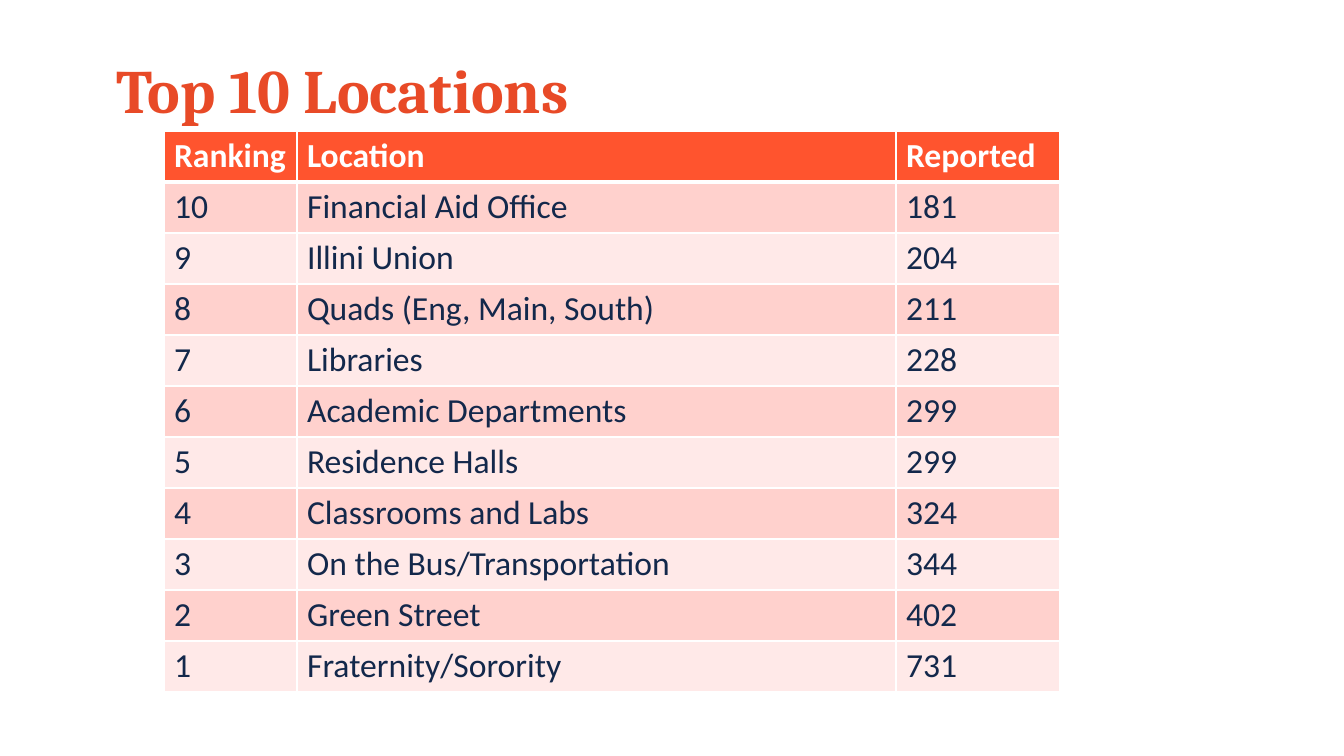
import dataclasses
import typing

import lxml.etree
import pptx
import pptx.dml.color
import pptx.enum.text
import pptx.oxml.ns
import pptx.slide
import pptx.table
import pptx.text.text
import pptx.util

EMU_PER_PX = 12192000 / 1344


@dataclasses.dataclass(frozen=True)
class Theme:
    title_color: str = "E84A27"
    header_fill: str = "FF542E"
    header_text: str = "FFFFFF"
    body_text: str = "13284B"
    band_fills: tuple[str, str] = ("FFD1CD", "FFE9E8")
    border: str = "FFFFFF"
    title_font: str = "Cambria"
    table_font: str = "Calibri"
    title_size: int = 44
    table_size: int = 24
    thin_line: int = 1
    thick_line: int = 3


@dataclasses.dataclass(frozen=True)
class Location:
    name: str
    reported: int


@dataclasses.dataclass(frozen=True)
class CellStyle:
    fill: str
    color: str
    bold: bool
    top: int
    bottom: int


THEME = Theme()
HEADINGS = ("Ranking", "Location", "Reported")
COLUMN_WIDTHS = (133, 599, 164)
ROW_HEIGHT = 51
LOCATIONS = (
    Location("Financial Aid Office", 181),
    Location("Illini Union", 204),
    Location("Quads (Eng, Main, South)", 211),
    Location("Libraries", 228),
    Location("Academic Departments", 299),
    Location("Residence Halls", 299),
    Location("Classrooms and Labs", 324),
    Location("On the Bus/Transportation", 344),
    Location("Green Street", 402),
    Location("Fraternity/Sorority", 731),
)


def px(length: int) -> pptx.util.Emu:
    return pptx.util.Emu(round(length * EMU_PER_PX))


def set_attributes(target: object, values: dict[str, typing.Any]) -> None:
    for name, value in values.items():
        setattr(target, name, value)


def write_text(
    paragraph: pptx.text.text._Paragraph, text: str, font: str, size: int, color: str, bold: bool
) -> None:
    run = paragraph.add_run()
    run.text = text
    set_attributes(run.font, {"name": font, "size": pptx.util.Pt(size), "bold": bold})
    run.font.color.rgb = pptx.dml.color.RGBColor.from_string(color)


def draw_title(slide: pptx.slide.Slide, text: str) -> None:
    frame = slide.shapes.add_textbox(px(107), px(31), px(1114), px(126)).text_frame
    set_attributes(
        frame, {"word_wrap": True, "vertical_anchor": pptx.enum.text.MSO_ANCHOR.MIDDLE}
    )
    paragraph = frame.paragraphs[0]
    paragraph.line_spacing = 0.9
    write_text(paragraph, text, THEME.title_font, THEME.title_size, THEME.title_color, True)


def draw_borders(cell: pptx.table._Cell, style: CellStyle) -> None:
    properties = cell._tc.get_or_add_tcPr()
    widths = {
        "a:lnL": THEME.thin_line,
        "a:lnR": THEME.thin_line,
        "a:lnT": style.top,
        "a:lnB": style.bottom,
    }
    for tag, width in widths.items():
        line = lxml.etree.SubElement(
            properties, pptx.oxml.ns.qn(tag), w=str(pptx.util.Pt(width))
        )
        fill = lxml.etree.SubElement(line, pptx.oxml.ns.qn("a:solidFill"))
        lxml.etree.SubElement(fill, pptx.oxml.ns.qn("a:srgbClr"), val=THEME.border)


def draw_cell(cell: pptx.table._Cell, text: str, style: CellStyle) -> None:
    draw_borders(cell, style)
    cell.fill.solid()
    cell.fill.fore_color.rgb = pptx.dml.color.RGBColor.from_string(style.fill)
    write_text(
        cell.text_frame.paragraphs[0],
        text,
        THEME.table_font,
        THEME.table_size,
        style.color,
        style.bold,
    )


def row_style(index: int) -> CellStyle:
    if index == 0:
        return CellStyle(
            THEME.header_fill, THEME.header_text, True, THEME.thin_line, THEME.thick_line
        )
    top = THEME.thick_line if index == 1 else THEME.thin_line
    fill = THEME.band_fills[(index - 1) % 2]
    return CellStyle(fill, THEME.body_text, False, top, THEME.thin_line)


def draw_ranking(slide: pptx.slide.Slide, locations: tuple[Location, ...]) -> None:
    ranked = [
        (str(len(locations) - index), location.name, str(location.reported))
        for index, location in enumerate(locations)
    ]
    rows = [HEADINGS, *ranked]
    table = slide.shapes.add_table(
        len(rows),
        len(HEADINGS),
        px(164),
        px(131),
        px(sum(COLUMN_WIDTHS)),
        px(ROW_HEIGHT * len(rows)),
    ).table
    for column, width in zip(table.columns, COLUMN_WIDTHS):
        column.width = px(width)
    for index, (row, texts) in enumerate(zip(table.rows, rows)):
        row.height = px(ROW_HEIGHT)
        for cell, text in zip(row.cells, texts):
            draw_cell(cell, text, row_style(index))


def main() -> None:
    presentation = pptx.Presentation()
    set_attributes(presentation, {"slide_width": px(1344), "slide_height": px(756)})
    slide = presentation.slides.add_slide(presentation.slide_layouts[6])
    draw_title(slide, "Top 10 Locations")
    draw_ranking(slide, LOCATIONS)
    presentation.save("out.pptx")


if __name__ == "__main__":
    main()
